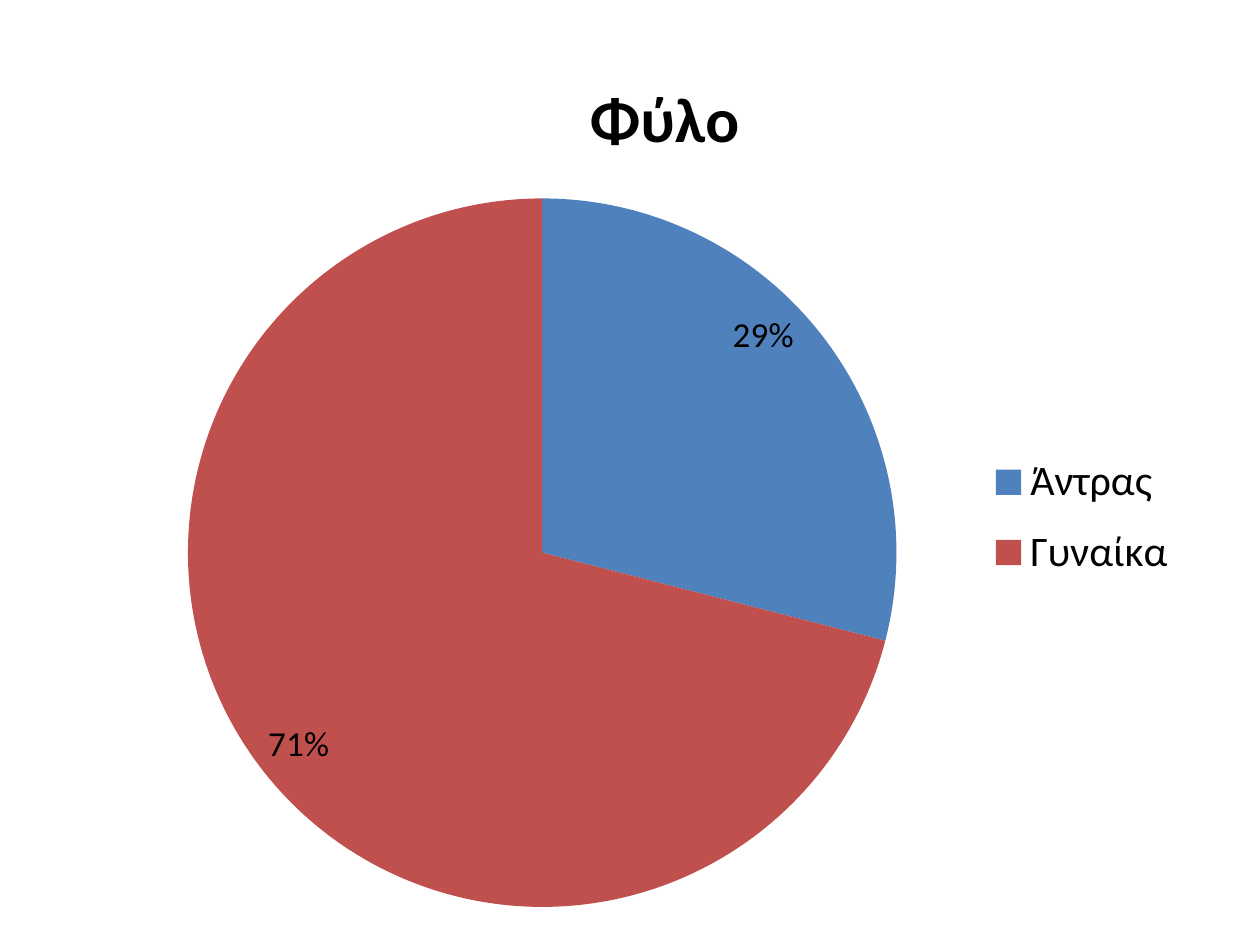
import pptx
import pptx.chart.data
import pptx.dml.color
import pptx.enum.chart
import pptx.oxml
import pptx.util
from pptx.util import Inches

BLACK = pptx.dml.color.RGBColor(0x00, 0x00, 0x00)
BLUE = pptx.dml.color.RGBColor(0x4F, 0x81, 0xBD)
RED = pptx.dml.color.RGBColor(0xC0, 0x50, 0x4D)
CHART_NS = "http://schemas.openxmlformats.org/drawingml/2006/chart"
C = f"{{{CHART_NS}}}"
EDGE_MODES = '<c:xMode val="edge"/><c:yMode val="edge"/>'
INNER_MODES = '<c:layoutTarget val="inner"/>' + EDGE_MODES


def style_font(font, size, bold=False):
    font.name = "Calibri"
    font.size = pptx.util.Pt(size)
    font.bold = bold
    font.color.rgb = BLACK


def place(part, index, modes, **fractions):
    """Place a chart part by fractions of the chart size."""
    for old_layout in part.findall(f"{C}layout"):
        part.remove(old_layout)
    values = "".join(f'<c:{name} val="{value}"/>' for name, value in fractions.items())
    part.insert(index, pptx.oxml.parse_xml(
        f'<c:layout xmlns:c="{CHART_NS}"><c:manualLayout>{modes}{values}'
        "</c:manualLayout></c:layout>"
    ))


deck = pptx.Presentation()
deck.slide_width = Inches(10)
deck.slide_height = Inches(7.5)
page = deck.slides.add_slide(deck.slide_layouts[6])

# Pie chart of respondents by gender
gender_data = pptx.chart.data.CategoryChartData()
gender_data.categories = ["Άντρας", "Γυναίκα"]
gender_data.add_series("Series 1", (29, 71))
chart = page.shapes.add_chart(
    pptx.enum.chart.XL_CHART_TYPE.PIE,
    Inches(0.86), Inches(0.31), Inches(8.83), Inches(7.03), gender_data,
).chart
style_font(chart.font, 10)
place(chart.element.find(f".//{C}plotArea"), 0, INNER_MODES, x=0.07, y=0.18, w=0.64, h=0.8)

# Title
chart.has_title = True
title_span = chart.chart_title.text_frame.paragraphs[0].add_run()
title_span.text = "Φύλο"
style_font(title_span.font, 36, bold=True)
chart.chart_title.include_in_layout = False

# Legend
chart.has_legend = True
chart.legend.position = pptx.enum.chart.XL_LEGEND_POSITION.RIGHT
chart.legend.include_in_layout = False
style_font(chart.legend.font, 24)
place(chart.element.find(f".//{C}legend"), 1, EDGE_MODES, x=0.78, y=0.45, w=0.19, h=0.18)

# Slices
plot = chart.plots[0]
plot.vary_by_categories = True
series = plot.series[0]
for index, color in enumerate((BLUE, RED)):
    slice_fill = series.points[index].format.fill
    slice_fill.solid()
    slice_fill.fore_color.rgb = color

# Percent labels
labels = series.data_labels
labels.show_percentage = True
labels.show_value = False
labels.number_format = "0%"
labels.number_format_is_linked = False
labels.position = pptx.enum.chart.XL_LABEL_POSITION.INSIDE_END
style_font(labels.font, 20)

# The first label sits a little up and to the left
first_label = series.points[0].data_label
first_label.position = pptx.enum.chart.XL_LABEL_POSITION.INSIDE_END
style_font(first_label.font, 20)
label_element = chart.element.find(f".//{C}dLbl")
label_element.find(f"{C}showVal").set("val", "0")
label_element.find(f"{C}showPercent").set("val", "1")
place(label_element, 1, "", x=-0.02, y=-0.03)

deck.save("out.pptx")
